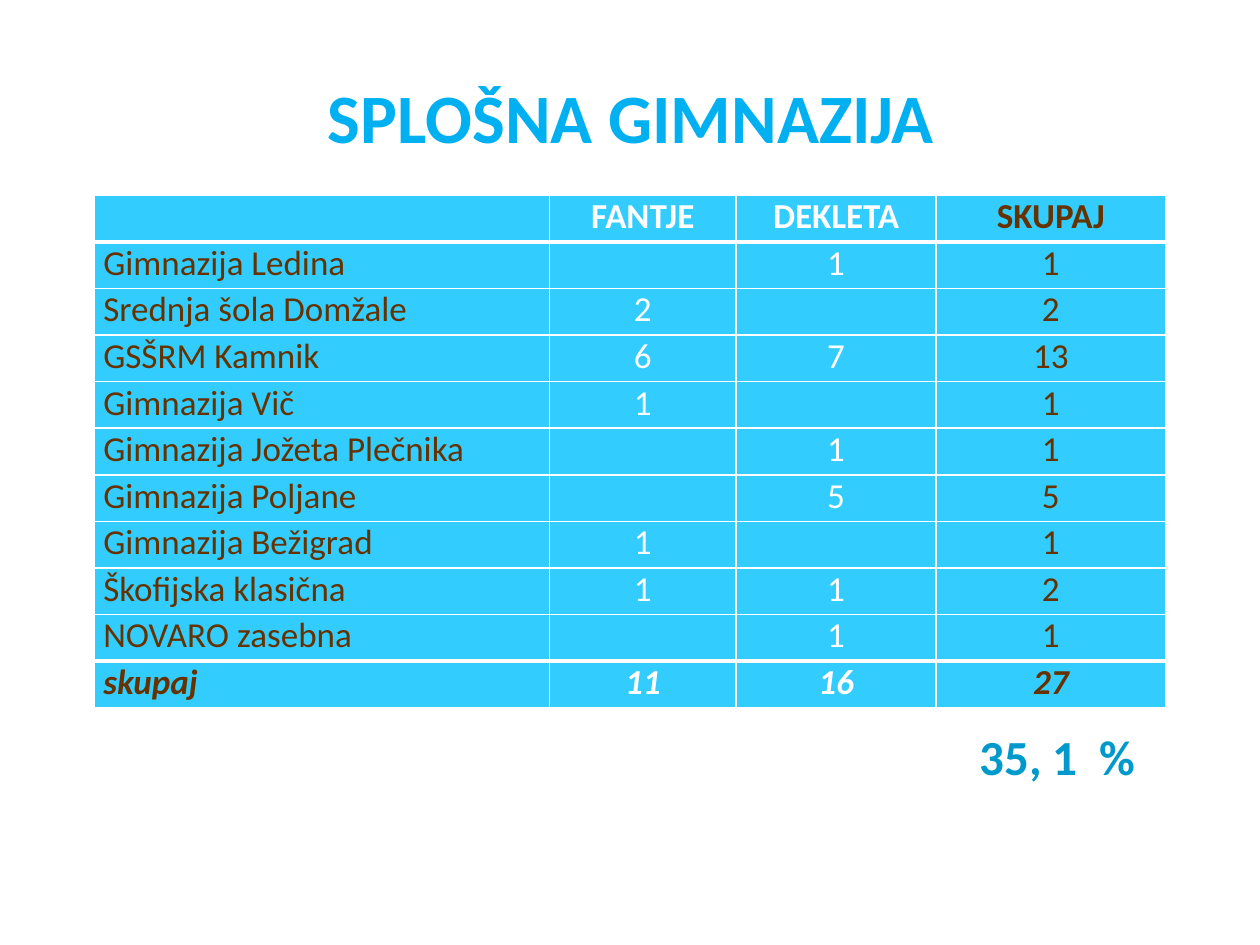
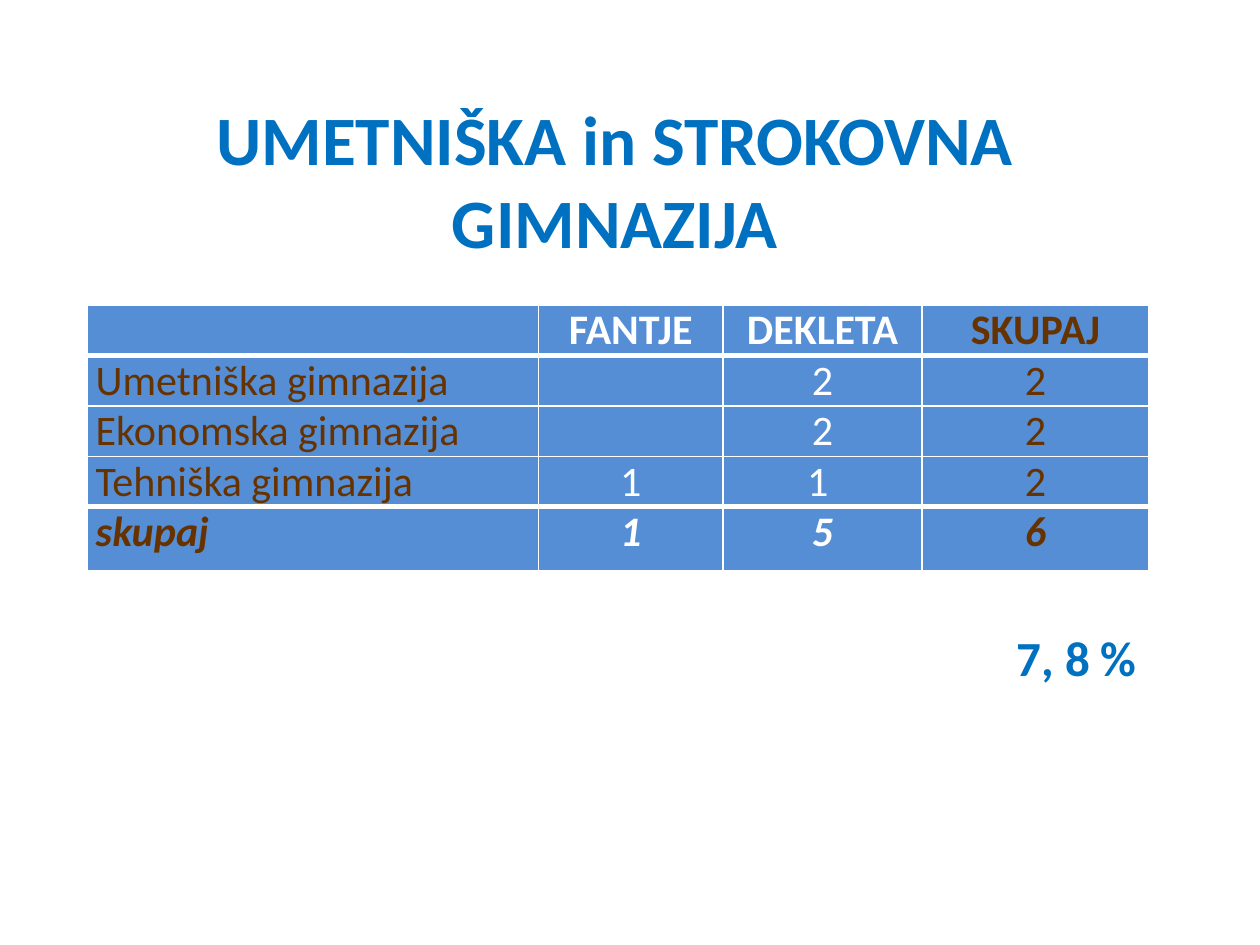
from lxml.etree import SubElement
from pptx import Presentation
from pptx.dml.color import RGBColor
from pptx.enum.text import MSO_ANCHOR as Anchor, PP_ALIGN as Align
from pptx.oxml.ns import qn
from pptx.util import Inches, Pt

FONT = "Calibri"
WHITE = RGBColor(0xFF, 0xFF, 0xFF)
BROWN = RGBColor(0x66, 0x33, 0x00)
SKY = RGBColor(0x00, 0xB0, 0xF0)
CYAN = RGBColor(0x33, 0xCC, 0xFF)
TEAL = RGBColor(0x00, 0x99, 0xCC)
BLUE = RGBColor(0x00, 0x70, 0xC0)
SOFT_BLUE = RGBColor(0x55, 0x8E, 0xD5)

TITLE_SIZE, SHARE_SIZE = 39.6, 28
THIN, THICK = 1, 3
HEADER = ("", "FANTJE", "DEKLETA", "SKUPAJ")
COLUMN_SHARES = (0.425, 0.174, 0.187, 0.214)
COLUMN_COLORS = (BROWN, WHITE, WHITE, BROWN)

PAGES = [
    {
        "title": "SPLOŠNA GIMNAZIJA", "title_color": SKY,
        "title_area": (0.51, 0.6, 9, 0.64),
        "schools": [
            ("Gimnazija Ledina", "", "1", "1"),
            ("Srednja šola Domžale", "2", "", "2"),
            ("GSŠRM Kamnik", "6", "7", "13"),
            ("Gimnazija Vič", "1", "", "1"),
            ("Gimnazija Jožeta Plečnika", "", "1", "1"),
            ("Gimnazija Poljane", "", "5", "5"),
            ("Gimnazija Bežigrad", "1", "", "1"),
            ("Škofijska klasična", "1", "1", "2"),
            ("NOVARO zasebna", "", "1", "1"),
        ],
        "total": ("skupaj", "11", "16", "27"),
        "table_place": (0.75, 1.55, 8.5), "fill": CYAN, "size": 20,
        "row_height": 0.37, "total_height": 0.37,
        "share": "35, 1  %", "share_color": TEAL,
        "share_area": (7.6, 5.72, 1.51, 0.57),
    },
    {
        "title": "UMETNIŠKA in STROKOVNA GIMNAZIJA", "title_color": BLUE,
        "title_area": (0.38, 0.8, 9, 1.25),
        "schools": [
            ("Umetniška gimnazija", "", "2", "2"),
            ("Ekonomska gimnazija", "", "2", "2"),
            ("Tehniška gimnazija", "1", "1 ", "2"),
        ],
        "total": ("skupaj", "1", "5", "6"),
        "table_place": (0.69, 2.42, 8.43), "fill": SOFT_BLUE, "size": 24,
        "row_height": 0.4, "total_height": 0.51,
        "share": "7, 8 %", "share_color": BLUE,
        "share_area": (7.76, 4.93, 1.36, 0.57),
    },
]


def write(frame, text, size, color, align, bold=True, italic=False):
    para = frame.paragraphs[0]
    para.alignment = align
    if text:
        span = para.add_run()
        span.text = text
        span.font.name = FONT
        span.font.size = Pt(size)
        span.font.bold = bold
        span.font.italic = italic
        span.font.color.rgb = color


def add_text(page, area, text, size, color, align, anchor):
    box = page.shapes.add_textbox(*map(Inches, area))
    box.text_frame.word_wrap = True
    box.text_frame.vertical_anchor = anchor
    write(box.text_frame, text, size, color, align)


def set_borders(cell, top, bottom):
    properties = cell._tc.get_or_add_tcPr()
    for side, width in (("L", THIN), ("R", THIN), ("T", top), ("B", bottom)):
        line = SubElement(properties, qn(f"a:ln{side}"), w=str(Pt(width)))
        fill = SubElement(line, qn("a:solidFill"))
        SubElement(fill, qn("a:srgbClr"), val=str(WHITE))


def add_school_table(page, content):
    rows = [HEADER, *content["schools"], content["total"]]
    last = len(rows) - 1
    heights = [content["row_height"]] * last + [content["total_height"]]
    left, top, width = content["table_place"]
    area = map(Inches, (left, top, width, sum(heights)))
    table = page.shapes.add_table(len(rows), len(HEADER), *area).table
    table.first_row = table.horz_banding = False
    for column, share in zip(table.columns, COLUMN_SHARES):
        column.width = Inches(width * share)
    for r, (texts, height) in enumerate(zip(rows, heights)):
        table.rows[r].height = Inches(height)
        for c, (text, color) in enumerate(zip(texts, COLUMN_COLORS)):
            cell = table.cell(r, c)
            cell.margin_left = cell.margin_right = Inches(0.07)
            cell.margin_top = cell.margin_bottom = 0
            set_borders(cell, THICK if r in (1, last) else THIN,
                        THICK if r in (0, last - 1) else THIN)
            cell.fill.solid()
            cell.fill.fore_color.rgb = content["fill"]
            write(cell.text_frame, text, content["size"], color,
                  Align.CENTER if c else Align.LEFT,
                  bold=r in (0, last), italic=r == last)


def main():
    deck = Presentation()
    deck.slide_width, deck.slide_height = Inches(10), Inches(7.5)
    for content in PAGES:
        page = deck.slides.add_slide(deck.slide_layouts[6])
        add_text(page, content["title_area"], content["title"], TITLE_SIZE,
                 content["title_color"], Align.CENTER, Anchor.MIDDLE)
        add_school_table(page, content)
        add_text(page, content["share_area"], content["share"], SHARE_SIZE,
                 content["share_color"], Align.RIGHT, Anchor.TOP)
    deck.save("out.pptx")


if __name__ == "__main__":
    main()
